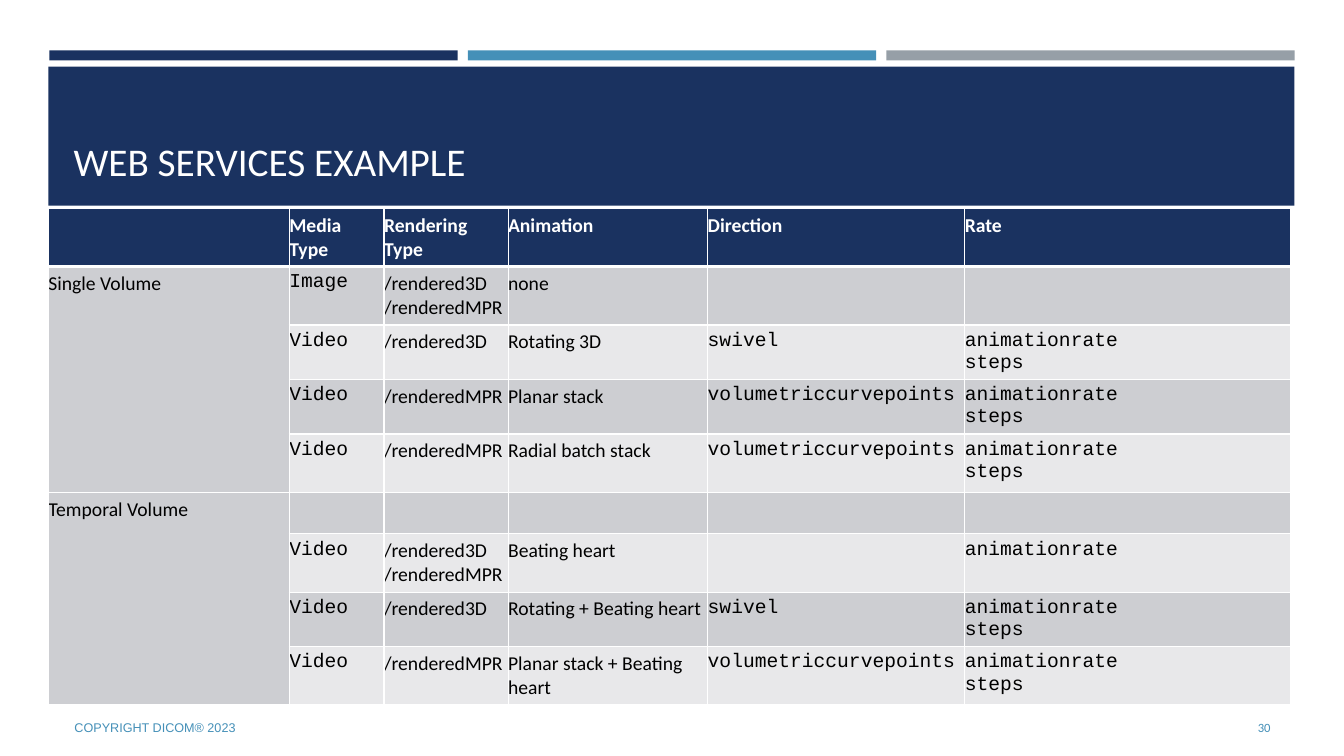
from lxml.etree import SubElement
from pptx import Presentation
from pptx.dml.color import RGBColor
from pptx.enum.shapes import MSO_SHAPE
from pptx.enum.text import MSO_ANCHOR, MSO_AUTO_SIZE, PP_ALIGN
from pptx.oxml import parse_xml
from pptx.oxml.ns import nsdecls, qn
from pptx.util import Inches, Pt

COLORS = {
    "navy": "1A3260", "blue": "4590B8", "gray": "969FA7",
    "white": "FFFFFF", "black": "000000",
    "dark band": "CDCED2", "light band": "E8E8EA",
}
SANS, MONO, FOOTER = "Calibri", "Courier New", "Arial"


class SlideBuilder:
    def __init__(self, slide):
        self.slide = slide

    def color(self, name):
        return RGBColor.from_string(COLORS[name])

    def format(self, paragraph, font, size, color, bold=False, align=PP_ALIGN.LEFT):
        paragraph.alignment = align
        style = paragraph.font
        style.name, style.size, style.bold = font, Pt(size), bold
        style.color.rgb = self.color(color)

    def bar(self, left, top, width, height, color):
        bar = self.slide.shapes.add_shape(
            MSO_SHAPE.RECTANGLE, Inches(left), Inches(top), Inches(width), Inches(height))
        bar.shadow.inherit = False
        bar.fill.solid()
        bar.fill.fore_color.rgb = self.color(color)
        bar.line.fill.background()

    def title(self, text, left, top, width, height):
        title = self.slide.shapes.title
        title.left, title.top = Inches(left), Inches(top)
        title.width, title.height = Inches(width), Inches(height)
        frame = title.text_frame
        frame.text = text
        frame.auto_size = MSO_AUTO_SIZE.NONE
        frame.vertical_anchor = MSO_ANCHOR.BOTTOM
        self.format(frame.paragraphs[0], SANS, 28, "white")
        # Bring the title in front of its band
        self.slide.shapes._spTree.append(title._element)

    def label(self, text, left, top, width, height, font, align=PP_ALIGN.LEFT):
        box = self.slide.shapes.add_textbox(
            Inches(left), Inches(top), Inches(width), Inches(height))
        frame = box.text_frame
        frame.word_wrap = True
        frame.vertical_anchor = MSO_ANCHOR.MIDDLE
        frame.text = text
        self.format(frame.paragraphs[0], font, 9, "blue", align=align)

    def borders(self, cell, widths):
        properties = cell._tc.get_or_add_tcPr()
        for index, (side, width) in enumerate(widths.items()):
            line = parse_xml(f'<a:ln{side} {nsdecls("a")} w="{Pt(width)}"/>')
            fill = SubElement(line, qn("a:solidFill"))
            SubElement(fill, qn("a:srgbClr"), val=COLORS["white"])
            properties.insert(index, line)

    def cell(self, cell, text, fill, font, color, bold, widths):
        cell.margin_left = cell.margin_right = 0
        cell.margin_top = cell.margin_bottom = Inches(0.05)
        self.borders(cell, widths)
        cell.fill.solid()
        cell.fill.fore_color.rgb = self.color(fill)
        if text:
            cell.text = text
            for paragraph in cell.text_frame.paragraphs:
                self.format(paragraph, font, 14, color, bold)

    def table(self, rows, left, top, column_widths, row_heights, mono_columns, groups):
        table = self.slide.shapes.add_table(
            len(rows), len(column_widths), Inches(left), Inches(top),
            Inches(sum(column_widths)), Inches(sum(row_heights))).table
        for column, width in zip(table.columns, column_widths):
            column.width = Inches(width)
        for row, height in zip(table.rows, row_heights):
            row.height = Inches(height)
        for r, texts in enumerate(rows):
            header = r == 0
            widths = {"L": 1, "R": 1, "T": 3 if r == 1 else 1, "B": 3 if header else 1}
            for c, text in enumerate(texts):
                band = "dark band" if c == 0 or r % 2 else "light band"
                mono = c in mono_columns and not header
                self.cell(table.cell(r, c), text, "navy" if header else band,
                          MONO if mono else SANS, "white" if header else "black",
                          header, widths)
        for first, last in groups:
            table.cell(first, 0).merge(table.cell(last, 0))


RATE_STEPS = "animationrate\nsteps"
BOTH_TYPES = "/rendered3D\n/renderedMPR"
CURVE = "volumetriccurvepoints"
SERVICES = [
    ["", "Media Type", "Rendering Type", "Animation", "Direction", "Rate"],
    ["Single Volume", "Image", BOTH_TYPES, "none", "", ""],
    ["", "Video", "/rendered3D", "Rotating 3D", "swivel", RATE_STEPS],
    ["", "Video", "/renderedMPR", "Planar stack", CURVE, RATE_STEPS],
    ["", "Video", "/renderedMPR", "Radial batch stack", CURVE, RATE_STEPS],
    ["Temporal Volume", "", "", "", "", ""],
    ["", "Video", BOTH_TYPES, "Beating heart", "", "animationrate"],
    ["", "Video", "/rendered3D", "Rotating + Beating heart", "swivel", RATE_STEPS],
    ["", "Video", "/renderedMPR", "Planar stack + Beating heart", CURVE, RATE_STEPS],
]


def main():
    presentation = Presentation()
    presentation.slide_width, presentation.slide_height = Inches(13.33), Inches(7.5)
    title_only = presentation.slide_layouts[5]
    builder = SlideBuilder(presentation.slides.add_slide(title_only))

    # Accent bars and title band
    for index, color in enumerate(["navy", "blue", "gray"]):
        builder.bar(0.49 + index * 4.15, 0.5, 4.05, 0.1, color)
    builder.bar(0.48, 0.66, 12.36, 1.38, "navy")
    builder.title("WEB SERVICES EXAMPLE", 0.63, 0.8, 12.06, 1.08)

    # Services table
    builder.table(
        SERVICES, 0.48, 2.07,
        column_widths=[2.39, 0.94, 1.23, 1.98, 2.55, 3.23],
        row_heights=[0.57, 0.58, 0.54, 0.54, 0.58, 0.41, 0.58, 0.54, 0.58],
        mono_columns=(1, 4, 5), groups=[(1, 4), (5, 8)])

    # Footer
    builder.label("COPYRIGHT DICOM® 2023", 0.64, 7.02, 7.56, 0.4, FOOTER)
    builder.label("30", 11.55, 7.02, 1.15, 0.4, SANS, PP_ALIGN.RIGHT)

    presentation.save("out.pptx")


if __name__ == "__main__":
    main()
